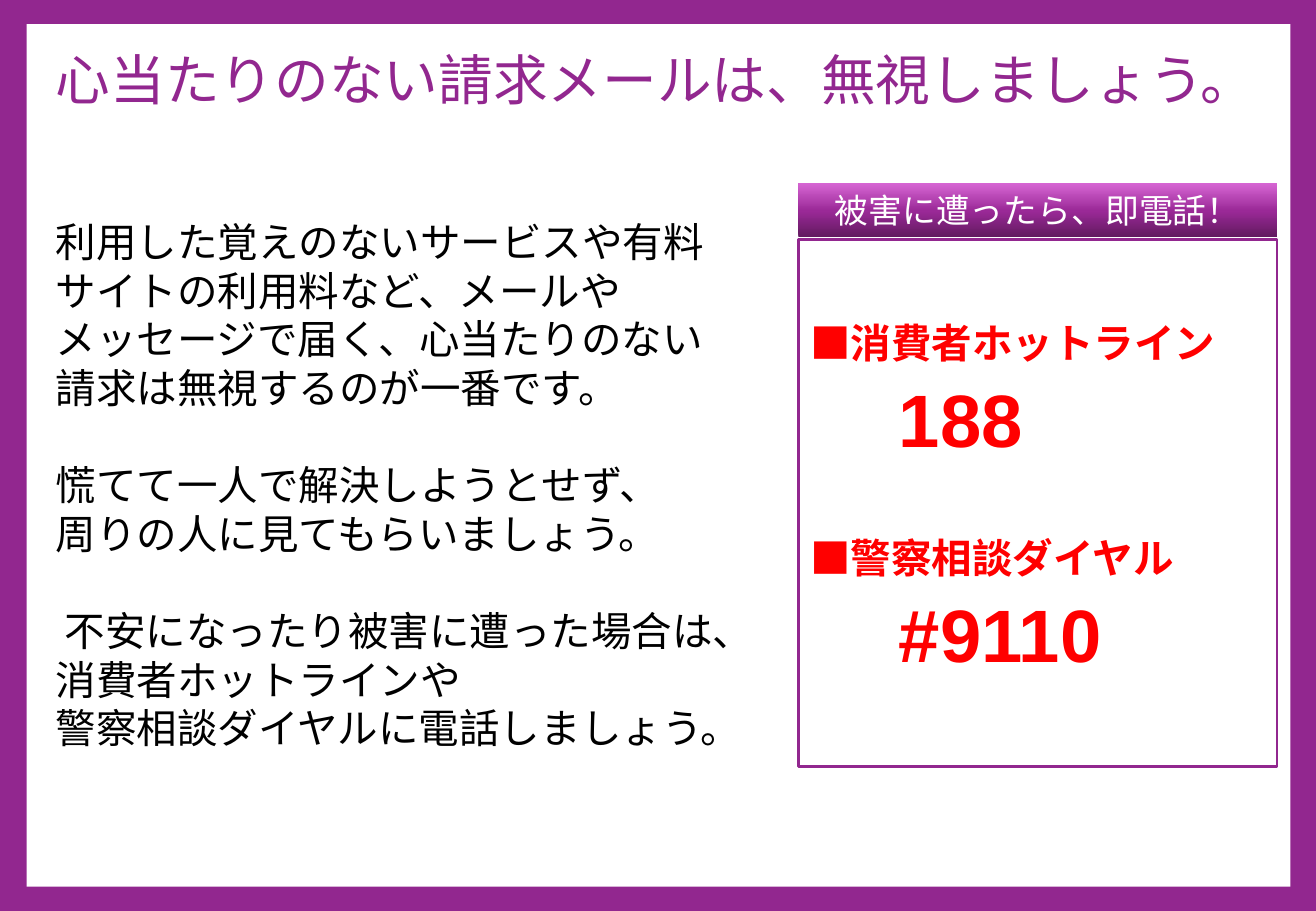
from copy import deepcopy
from dataclasses import dataclass

from pptx import Presentation
from pptx.dml.color import RGBColor
from pptx.enum.shapes import MSO_SHAPE
from pptx.enum.text import MSO_ANCHOR, PP_ALIGN
from pptx.util import Pt

PX = 9144


@dataclass(frozen=True)
class Theme:
    """Colours, fonts and type sizes of the slide."""
    purple: str = "92278F"
    white: str = "FFFFFF"
    black: str = "000000"
    red: str = "FF0000"
    gradient: tuple = ((0, "621A60"), (0.48, "9A2997"), (1, "D665D3"))
    display: str = "Calibri"
    text: str = "Arial"
    title_size: float = 32.4
    body_size: int = 24
    banner_size: int = 20
    number_size: int = 44


THEME = Theme()
TITLE = "心当たりのない請求メールは、無視しましょう。"
ADVICE = [
    ["利用した覚えのないサービスや有料", "サイトの利用料など、メールや",
     "メッセージで届く、⼼当たりのない", "請求は無視するのが⼀番です。"],
    ["慌てて⼀⼈で解決しようとせず、", "周りの⼈に⾒てもらいましょう。"],
    [" 不安になったり被害に遭った場合は、", "消費者ホットラインや",
     "警察相談ダイヤルに電話しましょう。"],
]
BANNER = "被害に遭ったら、即電話！"
HOTLINES = [("■消費者ホットライン", "188"), ("■警察相談ダイヤル", "#9110")]


def px(*lengths):
    """Turn px lengths into EMU."""
    return [length * PX for length in lengths]


def add_box(page, box, fill=None, line=None):
    """Add a plain rectangle at the given box."""
    shape = page.shapes.add_shape(MSO_SHAPE.RECTANGLE, *px(*box))
    shape.shadow.inherit = False
    if fill:
        shape.fill.solid()
        shape.fill.fore_color.rgb = RGBColor.from_string(fill)
    if line:
        shape.line.color.rgb = RGBColor.from_string(line)
        shape.line.width = Pt(1.5)
    else:
        shape.line.fill.background()
    shape.text_frame.word_wrap = True
    return shape


def add_text_box(page, box):
    """Add a wrapping text box and return its frame."""
    frame = page.shapes.add_textbox(*px(*box)).text_frame
    frame.word_wrap = True
    return frame


def write(frame, text, *, size, color, font=THEME.text, bold=False,
          align=PP_ALIGN.LEFT, before=0, indent=0, spacing=None):
    """Write one formatted paragraph into a frame."""
    para = frame.paragraphs[0]
    if para.runs:
        para = frame.add_paragraph()
    para.alignment = align
    para.space_before = Pt(before)
    if spacing:
        para.line_spacing = spacing
    if indent:
        properties = para._p.get_or_add_pPr()
        properties.set("marL", str(indent * PX))
        properties.set("indent", "0")
    span = para.add_run()
    span.text = text
    span.font.name = font
    span.font.size = Pt(size)
    span.font.bold = bold
    span.font.color.rgb = RGBColor.from_string(color)


def add_title(page, box):
    """Place the slide title."""
    frame = add_text_box(page, box)
    frame.vertical_anchor = MSO_ANCHOR.MIDDLE
    write(frame, TITLE, size=THEME.title_size, color=THEME.purple,
          font=THEME.display, spacing=0.9)


def add_advice(page, box):
    """Place the advice, one gap between its groups of lines."""
    frame = add_text_box(page, box)
    for group, lines in enumerate(ADVICE):
        for row, line in enumerate(lines):
            gap = 28.8 if group and row == 0 else 0
            write(frame, line, size=THEME.body_size, color=THEME.black,
                  before=gap)


def add_banner(page, box):
    """Place the gradient banner with its centred call."""
    shape = add_box(page, box)
    shape.fill.gradient()
    shape.fill.gradient_angle = 90
    first = shape._element.spPr.xpath(".//a:gs")[0]
    first.addnext(deepcopy(first))
    for stop, (position, color) in zip(shape.fill.gradient_stops, THEME.gradient):
        stop.position = position
        stop.color.rgb = RGBColor.from_string(color)
    shape.text_frame.vertical_anchor = MSO_ANCHOR.MIDDLE
    write(shape.text_frame, BANNER, size=THEME.banner_size, color=THEME.white,
          font=THEME.display, align=PP_ALIGN.CENTER)


def add_contacts(page, box):
    """Place the banner and, below it, the framed hotline numbers."""
    left, top, width, height = box
    banner_height, gap = 44, 2
    offset = banner_height + gap
    frame = add_box(page, (left, top + offset, width, height - offset),
                    THEME.white, THEME.purple).text_frame
    frame.vertical_anchor = MSO_ANCHOR.TOP
    frame.margin_top = 65 * PX
    for order, (name, number) in enumerate(HOTLINES):
        write(frame, name, size=THEME.body_size, color=THEME.red, bold=True,
              before=42 if order else 0)
        write(frame, number, size=THEME.number_size, color=THEME.red,
              bold=True, before=4, indent=73)
    add_banner(page, (left, top, width, banner_height))


def add_warning_page(deck):
    """Build the warning slide on the blank layout."""
    page = deck.slides.add_slide(deck.slide_layouts[6])
    page.background.fill.solid()
    page.background.fill.fore_color.rgb = RGBColor.from_string(THEME.purple)
    add_box(page, (22, 20, 1040, 710), THEME.white)
    add_title(page, (36, 32, 1025, 72))
    add_advice(page, (36, 174, 594, 454))
    add_contacts(page, (657, 151, 394, 480))


def main():
    """Create and save the deck."""
    deck = Presentation()
    deck.slide_width, deck.slide_height = px(1083, 750)
    add_warning_page(deck)
    deck.save("out.pptx")


if __name__ == "__main__":
    main()
